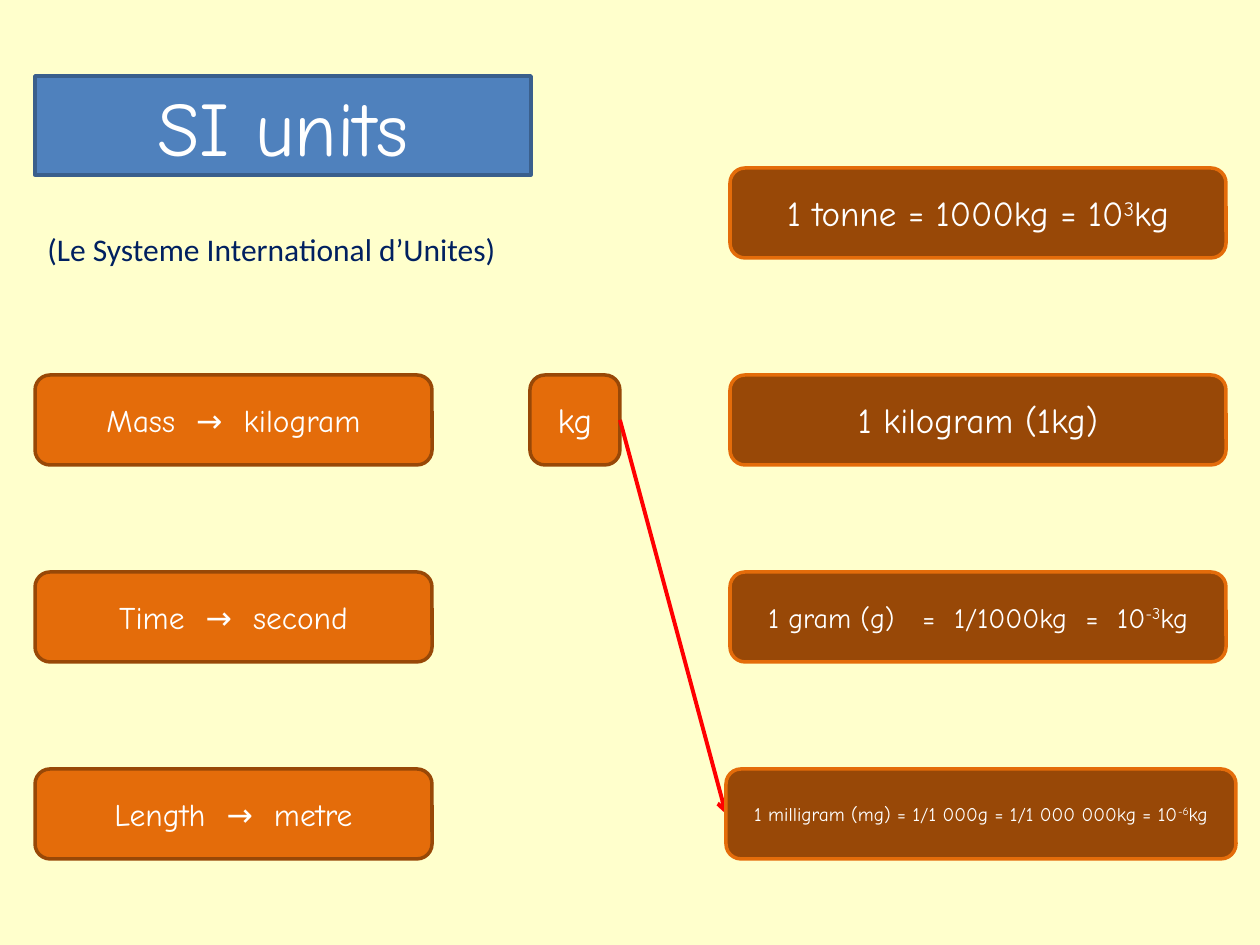
from lxml import etree
from pptx import Presentation
from pptx import util as u
from pptx.dml.color import RGBColor
from pptx.enum import shapes, text
from pptx.oxml.ns import qn

PX_PER_INCH = 126
CREAM = RGBColor(0xFF, 0xFF, 0xCC)
BLUE = RGBColor(0x4F, 0x81, 0xBD)
DARK_BLUE = RGBColor(0x3A, 0x5F, 0x8C)
NAVY = RGBColor(0x00, 0x20, 0x60)
ORANGE = RGBColor(0xE4, 0x6C, 0x0A)
BROWN = RGBColor(0x98, 0x48, 0x07)
RED = RGBColor(0xFF, 0x00, 0x00)
WHITE = RGBColor(0xFF, 0xFF, 0xFF)

RECT = shapes.MSO_SHAPE.RECTANGLE
ROUNDED = shapes.MSO_SHAPE.ROUNDED_RECTANGLE

LEFT_X, KG_X, RIGHT_X = 35, 530, 730
LEFT_W, WIDE_W, BOX_H = 397, 496, 90
ROW_Y, ROW_PITCH = 375, 197


def px(length):
    return u.Emu(round(length * u.Inches(1) / PX_PER_INCH))


def row_top(row):
    return ROW_Y + row * ROW_PITCH


def write(frame, *parts, size=18, font="Comic Neue", color=WHITE,
          align=text.PP_ALIGN.CENTER, anchor=text.MSO_ANCHOR.MIDDLE):
    """Write one paragraph; every second part is a superscript."""
    frame.word_wrap = True
    frame.vertical_anchor = anchor
    paragraph = frame.paragraphs[0]
    paragraph.alignment = align
    for index, part in enumerate(parts):
        run = paragraph.add_run()
        run.text = part
        run.font.size = u.Pt(size)
        run.font.name = font
        run.font.color.rgb = color
        if index % 2:
            run.font._element.set("baseline", "30000")


def add_box(slide, kind, left, top, width, height, fill, outline=None):
    box = slide.shapes.add_shape(kind, px(left), px(top), px(width), px(height))
    box.shadow.inherit = False
    box.fill.solid()
    box.fill.fore_color.rgb = fill
    if outline is None:
        box.line.fill.background()
    else:
        box.line.color.rgb = outline
        box.line.width = u.Pt(2)
    return box


def add_unit_box(slide, left, top, width, fill, outline, *parts, size):
    box = add_box(slide, ROUNDED, left, top, width, BOX_H, fill, outline)
    write(box.text_frame, *parts, size=size)
    return box


def add_arrow(slide, color):
    arrow = slide.shapes.add_connector(shapes.MSO_CONNECTOR.STRAIGHT, 0, 0, 0, 0)
    arrow.line.color.rgb = color
    arrow.line.width = u.Pt(2.25)
    etree.SubElement(arrow.line._get_or_add_ln(), qn("a:tailEnd"), type="arrow")
    etree.SubElement(arrow._element.spPr, qn("a:effectLst"))
    return arrow


def main():
    deck = Presentation()
    deck.slide_width, deck.slide_height = u.Inches(10), u.Inches(7.5)
    slide = deck.slides.add_slide(deck.slide_layouts[6])

    # Background and heading
    add_box(slide, RECT, 0, 0, 1260, 945, CREAM)
    title = add_box(slide, RECT, LEFT_X, 76, WIDE_W, 99, BLUE, DARK_BLUE)
    write(title.text_frame, "SI units", size=44)
    subtitle = slide.shapes.add_textbox(px(LEFT_X), px(224), px(595), px(50))
    write(subtitle.text_frame, "(Le Systeme International d’Unites)",
          font="Calibri", color=NAVY, align=text.PP_ALIGN.LEFT,
          anchor=text.MSO_ANCHOR.TOP)

    # Quantities and their base units
    quantities = ["Mass  →  kilogram", "Time  →  second", "Length  →  metre"]
    for row, quantity in enumerate(quantities):
        add_unit_box(slide, LEFT_X, row_top(row), LEFT_W, ORANGE, BROWN,
                     quantity, size=18)
    kg = add_unit_box(slide, KG_X, row_top(0), BOX_H, ORANGE, BROWN, "kg", size=20)

    # Multiples of the kilogram, with the arrow behind them
    arrow = add_arrow(slide, RED)
    add_unit_box(slide, RIGHT_X, 168, WIDE_W, BROWN, ORANGE,
                 "1 tonne = 1000kg = 10", "3", "kg", size=20)
    add_unit_box(slide, RIGHT_X, row_top(0), WIDE_W, BROWN, ORANGE,
                 "1 kilogram (1kg)", size=20)
    add_unit_box(slide, RIGHT_X, row_top(1), WIDE_W, BROWN, ORANGE,
                 "1 gram (g)   =  1/1000kg  =  10", "-3", "kg", size=16)
    milligram = add_unit_box(slide, 726, row_top(2), 510, BROWN, ORANGE,
                             "1 milligram (mg) = 1/1 000g = 1/1 000 000kg = 10",
                             "-6", "kg", size=11)
    arrow.begin_connect(kg, 3)
    arrow.end_connect(milligram, 1)

    deck.save("out.pptx")


if __name__ == "__main__":
    main()
